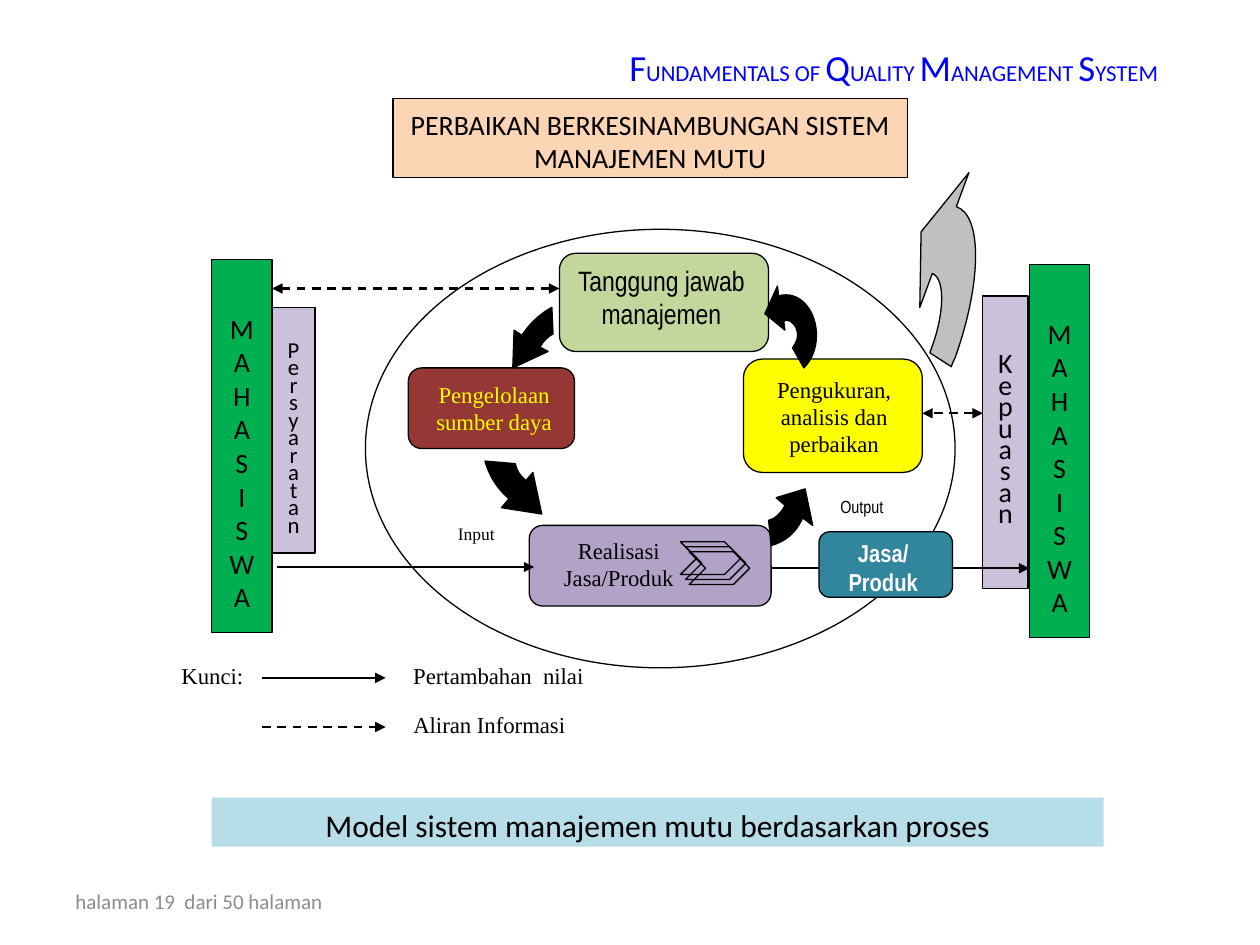
import math

import lxml.etree
import pptx
import pptx.dml.color
import pptx.enum.dml
import pptx.enum.shapes
import pptx.enum.text
import pptx.oxml.ns
import pptx.util

PX = 9144
KIND = pptx.enum.shapes.MSO_SHAPE
ALIGN = pptx.enum.text.PP_ALIGN
ANCHOR = pptx.enum.text.MSO_ANCHOR
SANS, SERIF, THIN = "Calibri", "Times New Roman", "Arial Narrow"
EDGE = (6, 6, 6, 6)


def px(*nums):
    return [pptx.util.Emu(round(n * PX)) for n in nums]


def tint(code):
    return pptx.dml.color.RGBColor.from_string(code)


def node(parent, tag, **values):
    return lxml.etree.SubElement(parent, pptx.oxml.ns.qn("a:" + tag), **values)


def write(frame, text, size=13, font=SANS, color="000000", bold=False,
          align=ALIGN.CENTER, anchor=ANCHOR.TOP, inset=EDGE, space=None):
    frame.word_wrap = True
    frame.vertical_anchor = anchor
    (frame.margin_left, frame.margin_top,
     frame.margin_right, frame.margin_bottom) = px(*inset)
    rows = [[(row, size)] for row in text.split("\n")] if isinstance(text, str) else [text]
    for i, row in enumerate(rows):
        para = frame.add_paragraph() if i else frame.paragraphs[0]
        para.alignment = align
        if space:
            para.line_spacing = space
        for words, points in row:
            run = para.add_run()
            run.text = words
            run.font.size = pptx.util.Pt(points)
            run.font.name = font
            run.font.bold = bold
            run.font.color.rgb = tint(color)


class Board:
    """Draw styled elements on the current slide."""

    def __init__(self, slide, ink="000000", thin=0.75, thick=1.25):
        self.shapes = slide.shapes
        self.ink, self.thin, self.thick = ink, thin, thick

    def paint(self, shape, fill, edge=True):
        shape.shadow.inherit = False
        if fill:
            shape.fill.solid()
            shape.fill.fore_color.rgb = tint(fill)
        else:
            shape.fill.background()
        if edge:
            shape.line.color.rgb = tint(self.ink)
            shape.line.width = pptx.util.Pt(self.thin)
        else:
            shape.line.fill.background()

    def box(self, place, fill=None, kind=KIND.RECTANGLE, text=None, edge=True, **style):
        shape = self.shapes.add_shape(kind, *px(*place))
        self.paint(shape, fill, edge)
        if text:
            write(shape.text_frame, text, **style)

    def round(self, place, fill):
        self.box(place, fill, KIND.ROUNDED_RECTANGLE)

    def text(self, place, text, **style):
        write(self.shapes.add_textbox(*px(*place)).text_frame, text, **style)

    def line(self, ends, dash=False, heads=("tailEnd",)):
        link = self.shapes.add_connector(pptx.enum.shapes.MSO_CONNECTOR.STRAIGHT, *px(*ends))
        link.line.color.rgb = tint(self.ink)
        link.line.width = pptx.util.Pt(self.thick)
        if dash:
            link.line.dash_style = pptx.enum.dml.MSO_LINE.DASH
        props = link.element.spPr
        for head in heads:
            node(props.find(pptx.oxml.ns.qn("a:ln")), head, type="triangle")
        node(props, "effectLst")

    def arrow(self, place, turn, start, moves, fill="000000"):
        left, top, width, height = place
        right, base = left + width, top + height
        pen = self.shapes.build_freeform(left, top, scale=PX)
        pen.add_line_segments([(right, top), (right, base), (left, base)])
        shape = pen.convert_to_shape()
        self.paint(shape, fill)
        shape.rotation = turn
        cos, sin = math.cos(math.radians(turn)), math.sin(math.radians(turn))
        route = shape.element.find(".//" + pptx.oxml.ns.qn("a:path"))
        route.set("w", str(width * PX))
        route.set("h", str(height * PX))
        for step in list(route):
            route.remove(step)
        tags = {2: "lnTo", 6: "cubicBezTo"}
        for tag, spots in [("moveTo", start)] + [(tags[len(move)], move) for move in moves]:
            step = node(route, tag)
            for x, y in zip(spots[::2], spots[1::2]):
                dx, dy = x - left - width / 2, y - top - height / 2
                across, down = px(width / 2 + dx * cos + dy * sin,
                                  height / 2 - dx * sin + dy * cos)
                node(step, "pt", x=str(int(across)), y=str(int(down)))
        node(route, "close")


def main():
    deck = pptx.Presentation()
    deck.slide_width, deck.slide_height = px(1000, 750)
    board = Board(deck.slides.add_slide(deck.slide_layouts[6]))
    both = ("headEnd", "tailEnd")
    wide = (10, 5, 10, 5)
    flat = (0, 0, 0, 0)

    board.text((50, 695, 233, 40), "halaman 19  dari 50 halaman", size=12, color="8C8C8C",
               align=ALIGN.LEFT, anchor=ANCHOR.MIDDLE, inset=wide)
    title = [("F", 21), ("UNDAMENTALS OF ", 13), ("Q", 21), ("UALITY ", 13),
             ("M", 21), ("ANAGEMENT ", 13), ("S", 21), ("YSTEM", 13)]
    board.text((80, 21, 850, 64), title, color="0000FF",
               align=ALIGN.RIGHT, anchor=ANCHOR.MIDDLE, inset=(10, 5, 11, 5))

    board.round((324, 292, 132, 64), "953735")
    board.text((348, 415, 60, 26), "Input", size=10, font=SERIF, inset=flat)
    board.text((648, 394, 72, 26), "Output", size=10, font=THIN, inset=flat)
    board.box((290, 182, 468, 348), kind=KIND.OVAL)
    board.box((312, 78, 408, 63), "FCD5B5", size=16, inset=(6, 7, 6, 6),
              text="PERBAIKAN BERKESINAMBUNGAN SISTEM MANAJEMEN MUTU")
    board.box((216, 244, 34, 195), "CCC1DA", text="\n".join("Persyaratan"),
              space=0.64, inset=(6, 29, 6, 6))
    board.box((780, 235, 36, 232), "CCC1DA", text="\n".join("Kepuasan"),
              size=16, space=0.64, anchor=ANCHOR.MIDDLE)
    for left, top in ((168, 206), (817, 210)):
        board.box((left, top, 48, 296), "00B050", text="\n".join("MAHASISWA"),
                  size=16, anchor=ANCHOR.MIDDLE, inset=(6, 32, 6, 6))

    board.round((444, 201, 166, 78), "C3D69B")
    board.round((590, 285, 142, 90), "FFFF00")
    board.round((650, 422, 106, 52), "31859C")
    board.round((420, 417, 192, 64), "B3A2C7")
    for left, top in ((540, 430), (547, 438), (544, 434)):
        board.box((left, top, 48, 26), kind=KIND.CHEVRON)

    board.line((444, 229, 216, 229), dash=True, heads=both)
    board.line((220, 450, 424, 450))
    board.line((612, 451, 650, 451), heads=())
    board.line((756, 451, 817, 451))
    board.line((780, 328, 732, 328), dash=True, heads=both)

    board.arrow((392, 318, 71, 103), 315, (417, 382),
                [(417, 382, 417, 382, 417, 381), (413, 378, 410, 373, 409, 368),
                 (385, 366), (388, 377, 394, 387, 403, 395),
                 (403, 396, 403, 396, 404, 396), (398, 403), (430, 408), (423, 375)])
    board.arrow((561, 352, 90, 72), 270, (623, 401),
                [(620, 407, 615, 412, 610, 413), (612, 433),
                 (623, 430, 632, 423, 637, 411), (645, 417), (639, 388), (616, 395)])
    board.arrow((592, 242, 65, 48), 270, (622, 255),
                [(623, 254, 623, 254, 624, 254), (629, 254, 633, 260, 633, 266),
                 (633, 270, 631, 273, 629, 276), (638, 292),
                 (644, 286, 648, 277, 648, 266), (648, 248, 637, 234, 624, 234),
                 (622, 234, 620, 234, 618, 235), (617, 227), (607, 249), (623, 262)])
    board.arrow((409, 234, 60, 98), 35, (428, 275),
                [(428, 275, 428, 275, 429, 275), (431, 271, 435, 267, 439, 265),
                 (438, 244), (430, 248, 421, 256, 415, 265),
                 (415, 266, 414, 266, 414, 266), (408, 262), (407, 292), (435, 279)])
    board.arrow((607, 230, 226, 79), 290, (740, 217),
                [(750, 221, 750, 248, 739, 277), (738, 278, 738, 279, 738, 280),
                 (755, 291), (756, 288, 757, 286, 758, 284),
                 (779, 225, 780, 171, 759, 164), (759, 164), (769, 137),
                 (731, 184), (730, 244)], fill="C0C0C0")

    key = dict(font=SERIF, align=ALIGN.LEFT, inset=(22, 0, 22, 11))
    board.line((208, 538, 306, 538))
    board.line((208, 577, 306, 577), dash=True)
    board.text((306, 525, 194, 33), "Pertambahan  nilai", **key)
    board.text((306, 564, 172, 37), "Aliran Informasi", **key)
    board.text((122, 525, 105, 32), "Kunci:", **key)
    board.box((168, 633, 708, 39), "B7DEE8", edge=False, size=18, inset=(13, 7, 13, 6),
              text="Model sistem manajemen mutu berdasarkan proses")

    board.text((437, 420, 108, 64), "Realisasi Jasa/Produk", font=SERIF)
    board.text((602, 285, 120, 90), "Pengukuran, analisis dan perbaikan",
               font=SERIF, inset=(6, 13, 6, 6))
    board.text((445, 203, 160, 78), "Tanggung jawab manajemen", size=16, font=THIN)
    board.text((336, 289, 112, 64), "Pengelolaan sumber daya", font=SERIF,
               color="FFFF00", inset=(0, 13, 0, 0))
    board.text((656, 427, 90, 41), "Jasa/ Produk", size=14, font=THIN,
               color="FFFFFF", bold=True, inset=(6, 0, 6, 0))
    deck.save("out.pptx")


if __name__ == "__main__":
    main()
